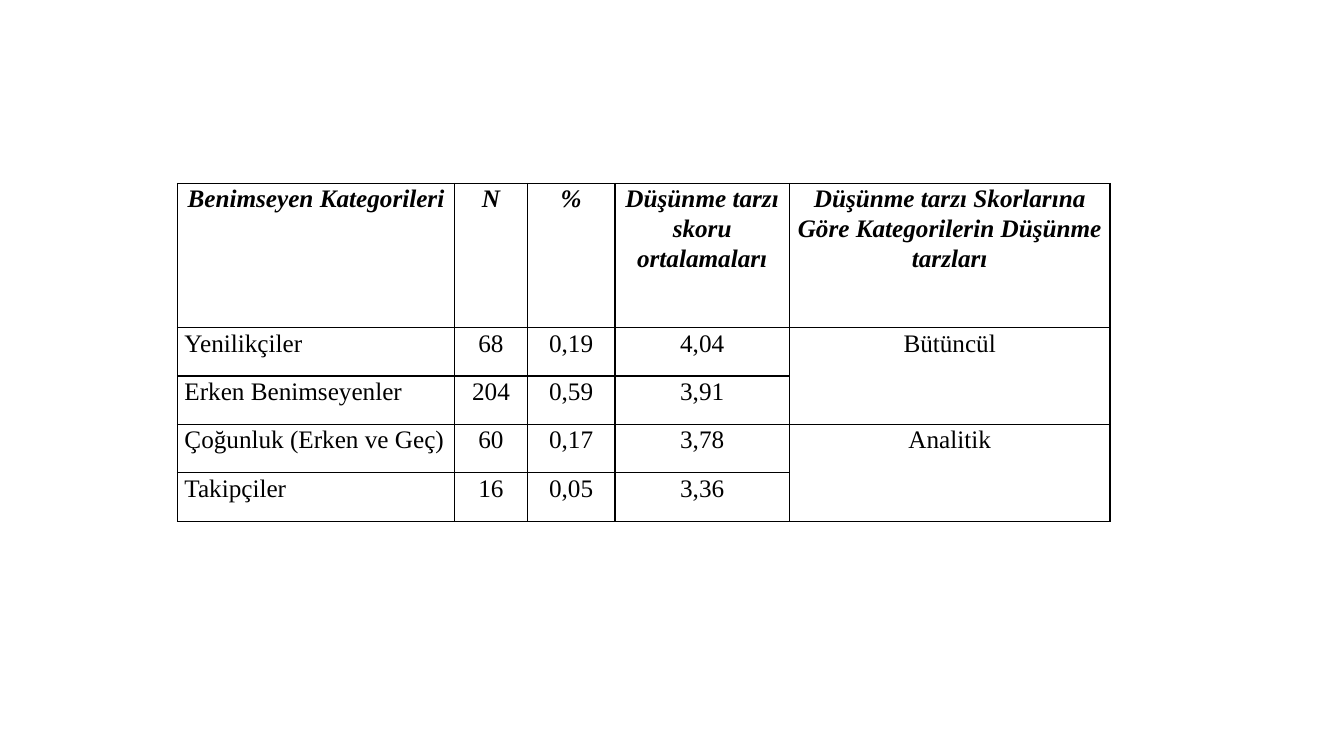
from lxml import etree
from pptx import Presentation
from pptx.dml.color import RGBColor
from pptx.enum.text import PP_ALIGN
from pptx.oxml.ns import qn
from pptx.util import Inches, Pt

CENTER, JUSTIFY = PP_ALIGN.CENTER, PP_ALIGN.JUSTIFY
BLACK = RGBColor(0, 0, 0)
FONT = "Times New Roman"

# Content
ROWS = [
    ("Benimseyen Kategorileri", "N", "%", "Düşünme tarzı skoru ortalamaları",
     "Düşünme tarzı Skorlarına Göre Kategorilerin Düşünme tarzları"),
    ("Yenilikçiler", "68", "0,19", "4,04", "Bütüncül"),
    ("Erken Benimseyenler", "204", "0,59", "3,91", ""),
    ("Çoğunluk (Erken ve Geç)", "60", "0,17", "3,78", "Analitik"),
    ("Takipçiler", "16", "0,05", "3,36", ""),
]
WIDTHS = [2.75, 0.72, 0.87, 1.73, 3.18]
HEIGHTS = [1.43] + [0.48] * 4
LEFT, TOP = 1.76, 1.82
PAIRS = [(1, 2), (3, 4)]  # rows that share a thinking style


def set_border(cell):
    props = cell._tc.get_or_add_tcPr()
    for i, side in enumerate(("lnL", "lnR", "lnT", "lnB")):
        line = etree.Element(qn(f"a:{side}"), w=str(Pt(1)))
        fill = etree.SubElement(line, qn("a:solidFill"))
        etree.SubElement(fill, qn("a:srgbClr"), val=str(BLACK))
        props.insert(i, line)


def fill_cell(cell, text, head, align):
    cell.fill.background()
    cell.margin_left = cell.margin_right = Inches(0.07)
    cell.margin_top = cell.margin_bottom = 0
    cell.text_frame.text = text
    para = cell.text_frame.paragraphs[0]
    para.alignment = align
    para.line_spacing = 1.07
    for run in para.runs:
        font = run.font
        font.name, font.size = FONT, Pt(18)
        font.bold = font.italic = head
        font.color.rgb = BLACK
    set_border(cell)


# Slide
prs = Presentation()
prs.slide_width, prs.slide_height = Inches(13.33), Inches(7.5)
slide = prs.slides.add_slide(prs.slide_layouts[6])

# Table
table = slide.shapes.add_table(
    len(ROWS), len(WIDTHS), Inches(LEFT), Inches(TOP),
    Inches(sum(WIDTHS)), Inches(sum(HEIGHTS))).table
table.horz_banding = False
for col, width in zip(table.columns, WIDTHS):
    col.width = Inches(width)
for row, height in zip(table.rows, HEIGHTS):
    row.height = Inches(height)

for r, row in enumerate(ROWS):
    for c, text in enumerate(row):
        align = JUSTIFY if r and c == 0 else CENTER
        fill_cell(table.cell(r, c), text, r == 0, align)

# Shared cells in the last column
last = len(WIDTHS) - 1
for first, end in PAIRS:
    table.cell(first, last).merge(table.cell(end, last))

prs.save("out.pptx")
